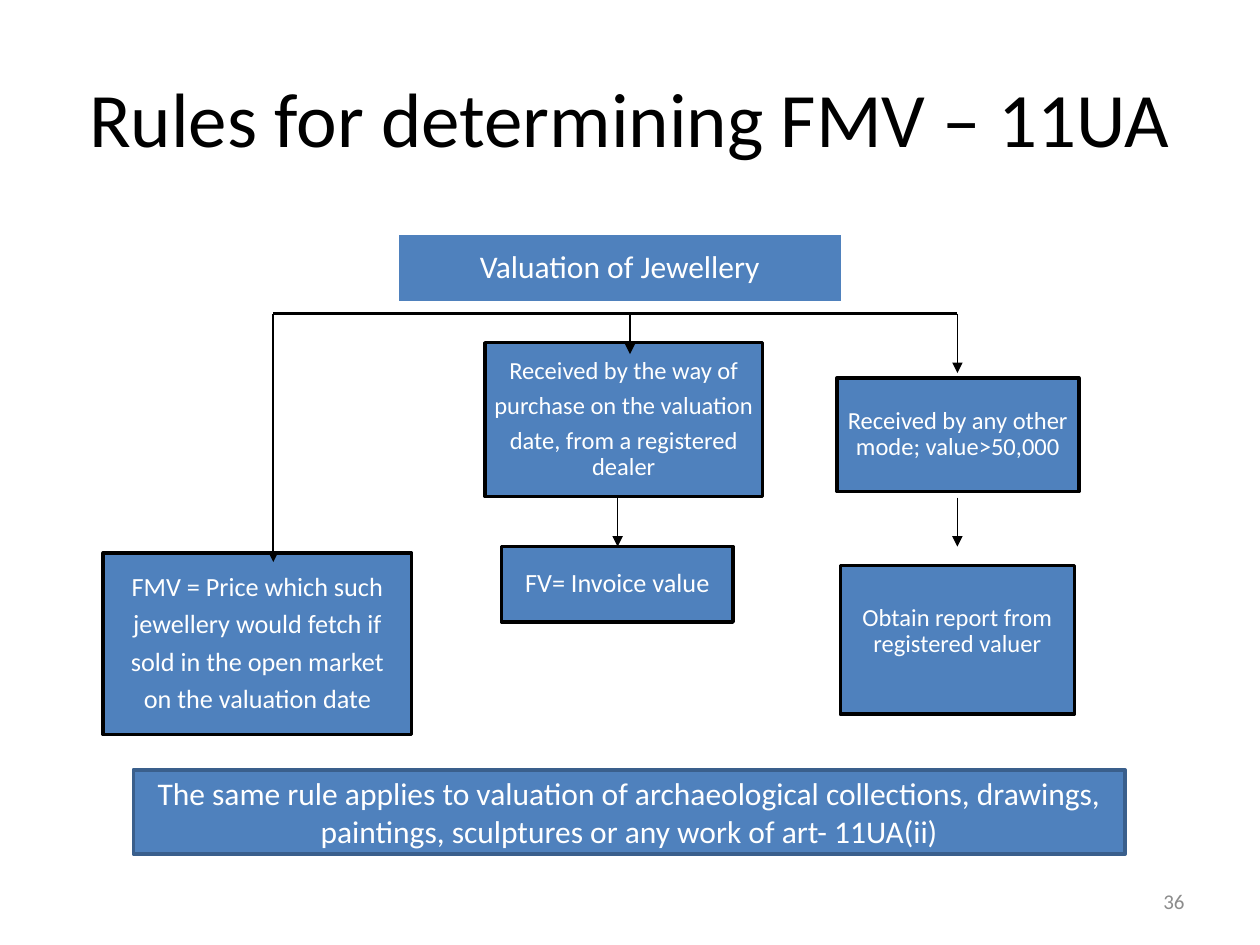
from lxml import etree
from pptx import Presentation
from pptx.dml.color import RGBColor
from pptx.enum import shapes, text
from pptx.oxml.ns import qn
from pptx.util import Cm, Pt

HUES = {"blue": "4F81BD", "edge": "3A5F8C", "black": "000000",
        "white": "FFFFFF", "grey": "8C8C8C"}


class Chart:
    """Holds the style and the current slide."""
    font = "Calibri"

    def __init__(self, deck):
        self.slide = deck.slides.add_slide(deck.slide_layouts[5])

    def hue(self, name):
        return RGBColor.from_string(HUES[name])

    def words(self, frame, lines, size, hue, align, space=None, gap=0):
        frame.word_wrap = True
        frame.vertical_anchor = text.MSO_ANCHOR.MIDDLE
        for i, line in enumerate(lines):
            para = frame.paragraphs[0] if i == 0 else frame.add_paragraph()
            para.alignment = align
            para.line_spacing = space
            para.space_after = Pt(gap)
            run = para.add_run()
            run.text = line
            run.font.name, run.font.size = self.font, Pt(size)
            run.font.color.rgb = self.hue(hue)

    def title(self, line):
        box = self.slide.shapes.title
        box.left, box.top, box.width, box.height = map(Cm, (1.27, 0.76, 22.86, 3.18))
        self.words(box.text_frame, [line], 44, "black", text.PP_ALIGN.CENTER)

    def box(self, place, lines, size, edge="black", inset=0.15, space=0.9):
        box = self.slide.shapes.add_shape(shapes.MSO_SHAPE.RECTANGLE, *map(Cm, place))
        box.shadow.inherit = False
        box.fill.solid()
        box.fill.fore_color.rgb = self.hue("blue")
        box.line.color.rgb = self.hue(edge)
        box.line.width = Pt(2)
        frame = box.text_frame
        frame.margin_left = frame.margin_right = Cm(inset)
        frame.margin_top = frame.margin_bottom = Cm(min(inset, 0.15))
        gap = 0.35 * size if space else 0
        self.words(frame, lines, size, "white", text.PP_ALIGN.CENTER, space, gap)
        return frame

    def line(self, x1, y1, x2, y2, width=1, arrow=True):
        line = self.slide.shapes.add_connector(
            shapes.MSO_CONNECTOR.STRAIGHT, *map(Cm, (x1, y1, x2, y2)))
        line.line.color.rgb = self.hue("black")
        line.line.width = Pt(width)
        props = line.element.spPr
        if arrow:
            etree.SubElement(props.find(qn("a:ln")), qn("a:tailEnd"), type="triangle")
        etree.SubElement(props, qn("a:effectLst"))

    def label(self, place, line):
        box = self.slide.shapes.add_textbox(*map(Cm, place))
        self.words(box.text_frame, [line], 12, "grey", text.PP_ALIGN.RIGHT)


def main():
    deck = Presentation()
    deck.slide_width, deck.slide_height = Cm(25.4), Cm(19.05)
    page = Chart(deck)
    page.title("Rules for determining FMV – 11UA")

    # Heading and the three cases
    page.box((8, 4.7, 8.99, 1.4), ["Valuation of Jewellery"], 18, edge="white")
    page.box((9.78, 6.91, 5.59, 3.1),
             ["Received by the way of", "purchase on the valuation",
              "date, from a registered dealer"], 14)
    page.box((16.87, 7.62, 4.88, 2.29),
             ["Received by any other mode; value>50,000"], 14)
    page.box((2.08, 11.15, 6.22, 3.66),
             ["FMV = Price which such", "jewellery would fetch if",
              "sold in the open market", "on the valuation date"], 15)

    # Outcomes
    page.box((10.11, 11.02, 4.67, 1.52), ["FV= Invoice value"], 15)
    report = page.box((16.94, 11.4, 4.72, 3),
                      ["Obtain report from registered valuer"], 14)
    report.vertical_anchor = text.MSO_ANCHOR.TOP
    report.margin_top = Cm(0.8)

    # Branch line and arrows
    left, mid, right, bar = 5.51, 12.7, 19.3, 6.32
    page.line(left, bar, right, bar, width=1.25, arrow=False)
    for x, end in ((left, 11.33), (mid, 7.14), (right, 7.52)):
        page.line(x, bar, x, end)
    for x in (12.45, right):
        page.line(x, 10.03, x, 11.02)

    # Closing note and page number
    page.box((2.69, 15.52, 19.99, 1.7),
             ["The same rule applies to valuation of archaeological collections, "
              "drawings, paintings, sculptures or any work of art- 11UA(ii)"],
             18, edge="edge", inset=0.25, space=None)
    page.label((18.21, 17.65, 5.92, 1.02), "36")
    deck.save("out.pptx")


if __name__ == "__main__":
    main()
